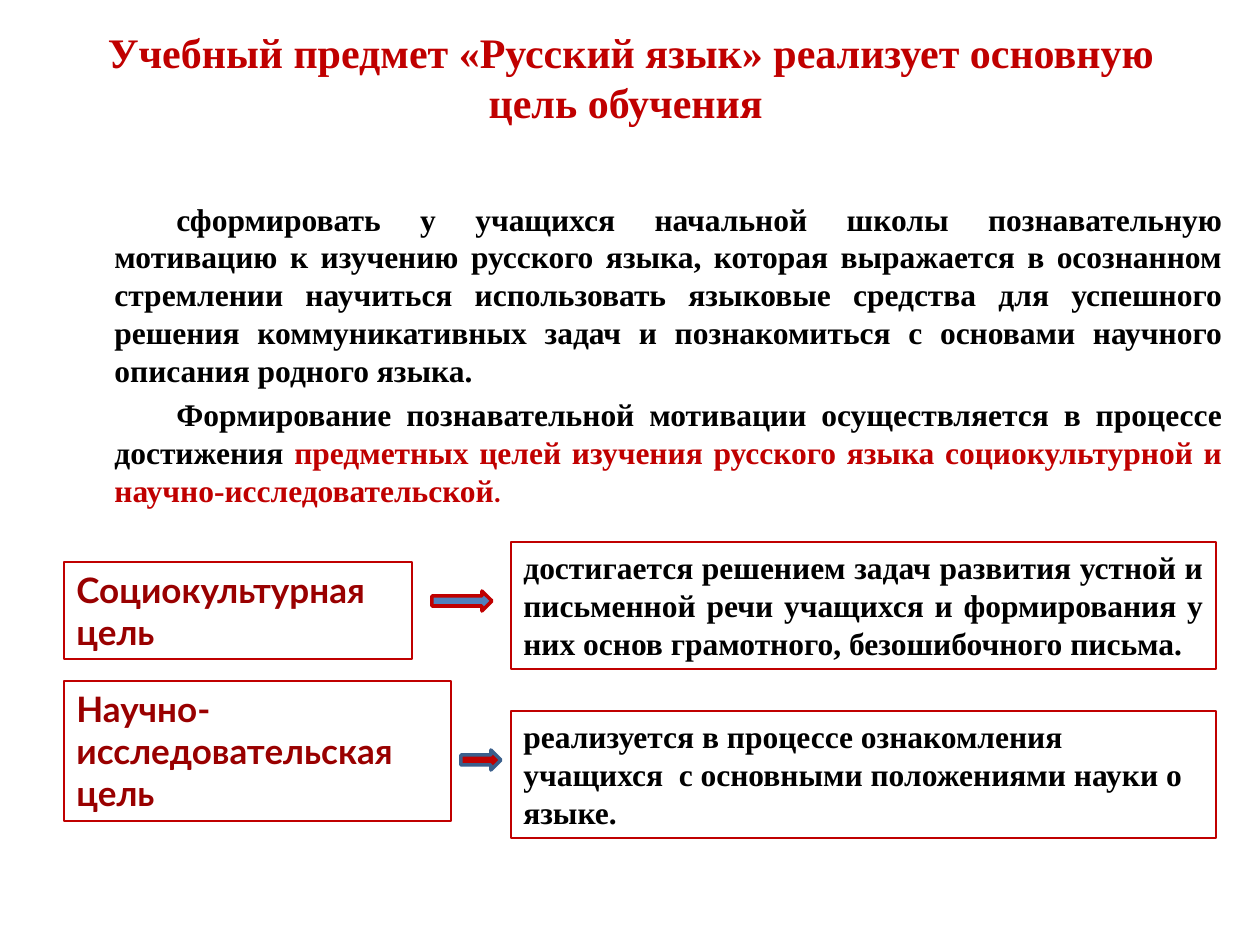
import pptx
import pptx.util
import pptx.dml.color
import pptx.enum.shapes
import pptx.enum.text

Pt = pptx.util.Pt
SHAPE = pptx.enum.shapes.MSO_SHAPE
ALIGN = pptx.enum.text.PP_ALIGN
ANCHOR = pptx.enum.text.MSO_ANCHOR

SERIF, SANS = "Times New Roman", "Lato"
RED, DARK, BLACK, WHITE = "C00000", "990000", "000000", "FFFFFF"
BLUE, NAVY = "4F81BD", "3A5F8C"

# Content: a paragraph is a list of runs (text, font, size, colour)
TITLE = [[("Учебный предмет «Русский язык» реализует основную цель обучения ",
           SERIF, 24, RED)]]
BODY = [
    [("сформировать у учащихся начальной школы познавательную мотивацию "
      "к изучению русского языка, которая выражается в осознанном стремлении "
      "научиться использовать языковые средства для успешного решения "
      "коммуникативных задач и познакомиться с основами научного описания "
      "родного языка.", SERIF, 18, BLACK)],
    [("Формирование познавательной мотивации осуществляется в процессе "
      "достижения ", SERIF, 18, BLACK),
     ("предметных целей изучения русского языка социокультурной и "
      "научно-исследовательской", SERIF, 18, RED),
     (".", SANS, 16, RED)],
]
# Goals: name, its box, meaning, its box, alignment
GOALS = [
    ("Социокультурная цель", (64, 562, 348, 97),
     "достигается решением задач развития устной и письменной речи учащихся "
     "и формирования у них основ грамотного, безошибочного письма.",
     (511, 542, 705, 127), ALIGN.JUSTIFY),
    ("Научно-исследовательская цель", (64, 681, 387, 140),
     "реализуется в процессе ознакомления учащихся  с основными положениями "
     "науки о языке.",
     (511, 711, 705, 127), ALIGN.LEFT),
]
# Arrows: box, fill, line
ARROWS = [((432, 591, 60, 20), BLUE, RED),
          ((461, 750, 40, 20), RED, NAVY)]


def px(num):
    return round(num * 914400 / 126)


def color(code):
    return pptx.dml.color.RGBColor.from_string(code)


def shape(kind, box, fill=None, line=None, width=0.75):
    item = slide.shapes.add_shape(kind, *map(px, box))
    item.shadow.inherit = False
    for part, code in ((item.fill, fill), (item.line.fill, line)):
        if code:
            part.solid()
            part.fore_color.rgb = color(code)
        else:
            part.background()
    if line:
        item.line.width = Pt(width)
    return item


def write(item, paras, align, anchor=ANCHOR.TOP):
    frame = item.text_frame
    frame.word_wrap = True
    frame.vertical_anchor = anchor
    for i, runs in enumerate(paras):
        para = frame.add_paragraph() if i else frame.paragraphs[0]
        para.alignment = align
        for text, font, size, code in runs:
            run = para.add_run()
            run.text = text
            run.font.name, run.font.size, run.font.bold = font, Pt(size), True
            run.font.color.rgb = color(code)


deck = pptx.Presentation()
deck.slide_width, deck.slide_height = px(1260), px(945)
slide = deck.slides.add_slide(deck.slide_layouts[6])

# Title
title = slide.shapes.add_textbox(*map(px, (64, 19, 1134, 115)))
write(title, TITLE, ALIGN.CENTER, ANCHOR.MIDDLE)

# Main text with first-line indents
body = shape(SHAPE.RECTANGLE, (54, 185, 1181, 338), WHITE)
write(body, BODY, ALIGN.JUSTIFY, ANCHOR.MIDDLE)
for para in body.text_frame.paragraphs:
    para.space_before = Pt(3.6)
    props = para._p.get_or_add_pPr()
    props.set("marL", str(px(48)))
    props.set("indent", str(px(62)))

# Goals and their meanings
for name, left, note, right, align in GOALS:
    write(shape(SHAPE.RECTANGLE, left, line=RED),
          [[(name, SANS, 20, DARK)]], ALIGN.LEFT)
    write(shape(SHAPE.RECTANGLE, right, line=RED),
          [[(note, SERIF, 18, BLACK)]], align)

# Arrows from goal to meaning
for box, fill, line in ARROWS:
    shape(SHAPE.RIGHT_ARROW, box, fill, line, 2)

deck.save("out.pptx")
